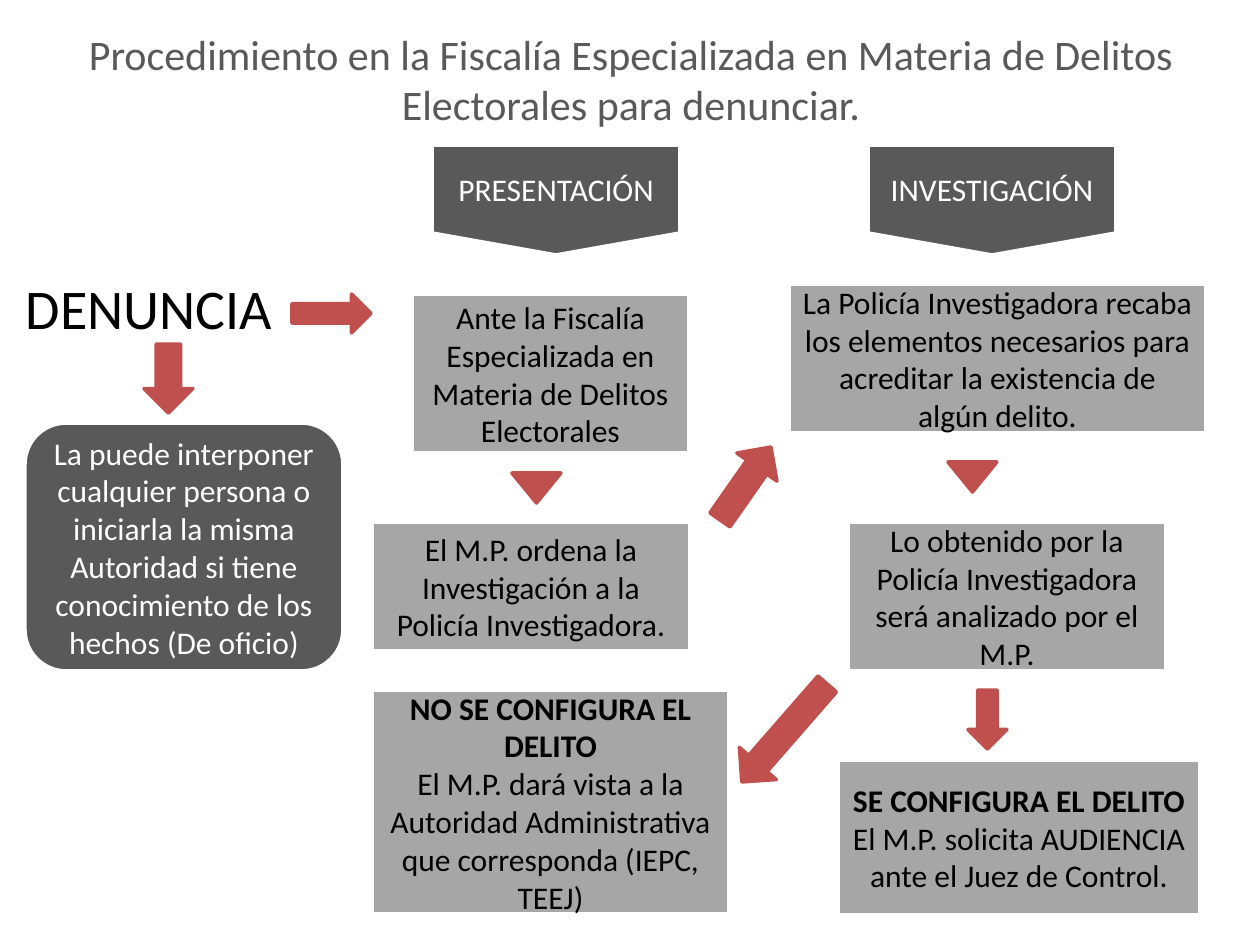
from pptx import Presentation
from pptx import util as u
from pptx.dml.color import RGBColor
from pptx.enum import shapes, text

SCALE = 914400 / 126
DARK, GREY, RED, WHITE, BLACK = "595959", "A6A6A6", "C0504D", "FFFFFF", "000000"
KIND = shapes.MSO_SHAPE


def px(length):
    return u.Emu(round(length * SCALE))


def color(value):
    return RGBColor.from_string(value)


def write(frame, lines, size, ink, bold_first=False):
    frame.word_wrap = True
    frame.vertical_anchor = text.MSO_ANCHOR.MIDDLE
    for index, line in enumerate(lines):
        paragraph = frame.add_paragraph() if index else frame.paragraphs[0]
        paragraph.text = line
        paragraph.alignment = text.PP_ALIGN.CENTER
        font = paragraph.font
        font.name, font.size = "Calibri", u.Pt(size)
        font.bold = bold_first and index == 0
        font.color.rgb = color(ink)


def add_block(slide, origin, kind, box, fill, border):
    left, top, width, height = box
    block = slide.shapes.add_shape(
        kind, px(origin[0] + left), px(origin[1] + top), px(width), px(height))
    block.shadow.inherit = False
    block.fill.solid()
    block.fill.fore_color.rgb = color(fill)
    block.line.color.rgb = color(border)
    block.line.width = u.Pt(2)
    return block


def add_arrow(slide, origin, kind, box, rotation=0):
    add_block(slide, origin, kind, box, RED, RED).rotation = rotation


def add_heading(slide, origin, box, label):
    heading = add_block(slide, origin, KIND.FLOWCHART_OFFPAGE_CONNECTOR, box, DARK, WHITE)
    write(heading.text_frame, [label], 18, WHITE)


def add_step(slide, origin, box, *lines):
    step = add_block(slide, origin, KIND.RECTANGLE, box, GREY, WHITE)
    write(step.text_frame, lines, 18, BLACK, bold_first=len(lines) > 1)


def add_title(slide, box):
    title = slide.shapes.title
    title.left, title.top, title.width, title.height = map(px, box)
    write(title.text_frame,
          ["Procedimiento en la Fiscalía Especializada en Materia de Delitos "
           "Electorales para denunciar."], 24, DARK)


def add_complaint(slide, origin):
    left, top = origin
    complaint = slide.shapes.add_textbox(px(left), px(top), px(248), px(68)).text_frame
    complaint.margin_left = complaint.margin_right = 0
    complaint.margin_top = complaint.margin_bottom = 0
    write(complaint, ["DENUNCIA"], 32, BLACK)
    who = add_block(slide, origin, KIND.ROUNDED_RECTANGLE, (0, 150, 318, 248), DARK, WHITE)
    write(who.text_frame,
          ["La puede interponer cualquier persona o iniciarla la misma Autoridad "
           "si tiene conocimiento de los hechos (De oficio)"], 18, WHITE)
    add_arrow(slide, origin, KIND.RIGHT_ARROW, (267, 21, 79, 39))
    add_arrow(slide, origin, KIND.DOWN_ARROW, (119, 71, 49, 69))


def add_filing(slide, origin):
    add_heading(slide, origin, (60, 0, 248, 110), "PRESENTACIÓN")
    add_step(slide, origin, (40, 149, 277, 159),
             "Ante la Fiscalía Especializada en Materia de Delitos Electorales")
    add_step(slide, origin, (0, 377, 318, 129),
             "El M.P. ordena la Investigación a la Policía Investigadora.")
    add_step(slide, origin, (0, 545, 357, 224), "NO SE CONFIGURA EL DELITO",
             "El M.P. dará vista a la Autoridad Administrativa que corresponda (IEPC, TEEJ)")
    add_arrow(slide, origin, KIND.FLOWCHART_MERGE, (140, 328, 49, 30))
    add_arrow(slide, origin, KIND.RIGHT_ARROW, (329, 314, 89, 49), 305)


def add_investigation(slide, origin):
    add_heading(slide, origin, (79, 0, 248, 110), "INVESTIGACIÓN")
    add_step(slide, origin, (0, 139, 417, 149),
             "La Policía Investigadora recaba los elementos necesarios para "
             "acreditar la existencia de algún delito.")
    add_step(slide, origin, (59, 377, 318, 149),
             "Lo obtenido por la Policía Investigadora será analizado por el M.P.")
    add_step(slide, origin, (49, 615, 362, 155), "SE CONFIGURA EL DELITO",
             "El M.P. solicita AUDIENCIA ante el Juez de Control.")
    add_arrow(slide, origin, KIND.FLOWCHART_MERGE, (159, 317, 49, 30))
    add_arrow(slide, origin, KIND.DOWN_ARROW, (179, 545, 39, 59))
    add_arrow(slide, origin, KIND.DOWN_ARROW, (-29, 523, 49, 130), 41.1)


def main():
    deck = Presentation()
    deck.slide_width, deck.slide_height = px(1260), px(945)
    slide = deck.slides.add_slide(deck.slide_layouts[5])
    add_title(slide, (64, 0, 1134, 158))
    add_complaint(slide, (25, 273))
    add_filing(slide, (372, 145))
    add_investigation(slide, (789, 145))
    deck.save("out.pptx")


if __name__ == "__main__":
    main()
